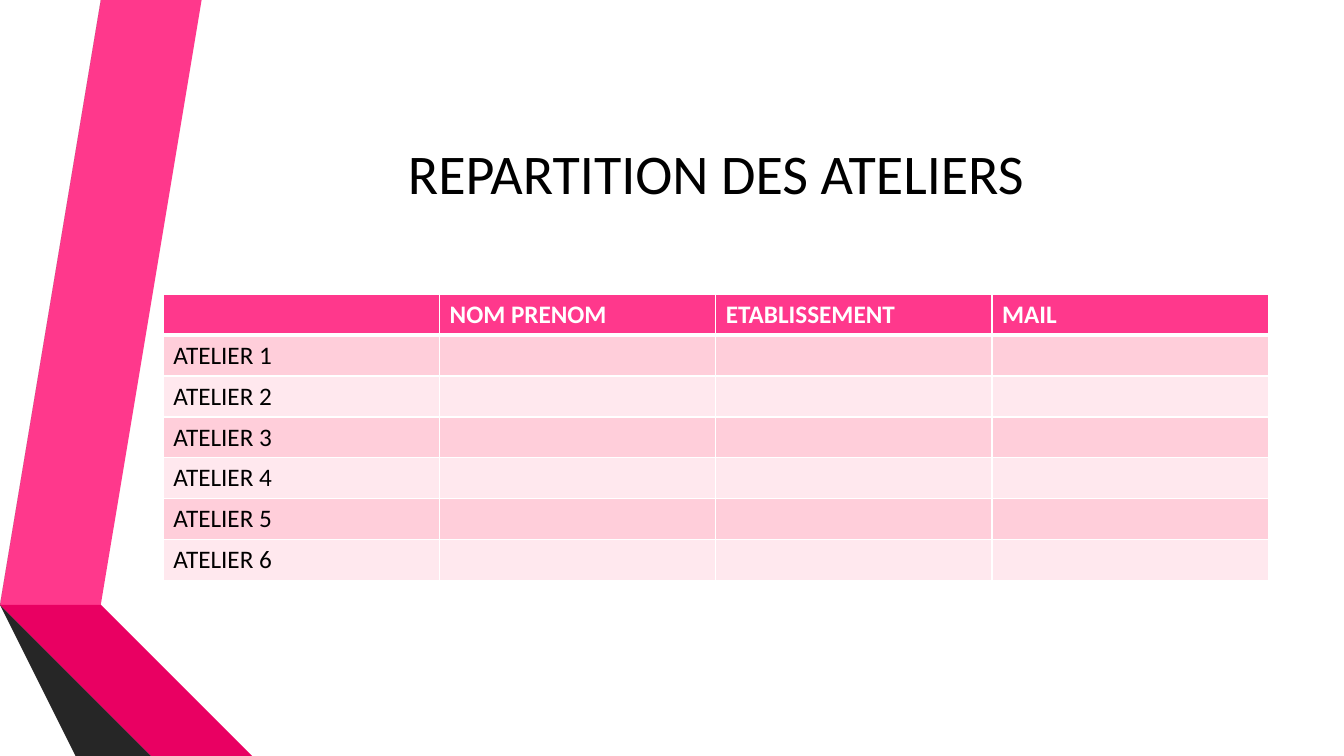
from lxml import etree
from pptx import Presentation
from pptx.dml.color import RGBColor
from pptx.enum import text
from pptx.oxml import ns
from pptx.util import Inches, Pt

PINK = RGBColor(0xFF, 0x38, 0x8C)
DEEP_PINK = RGBColor(0xE9, 0x00, 0x62)
DARK_PINK = RGBColor(0x9C, 0x00, 0x42)
GREY = RGBColor(0x59, 0x59, 0x59)
DEEP_GREY = RGBColor(0x40, 0x40, 0x40)
DARK_GREY = RGBColor(0x26, 0x26, 0x26)
BAND_COLOURS = [RGBColor(0xFF, 0xCE, 0xDA), RGBColor(0xFF, 0xE8, 0xEE)]
BLACK = RGBColor(0, 0, 0)
WHITE = RGBColor(0xFF, 0xFF, 0xFF)

FONT = "Calibri"
TITLE = "REPARTITION DES ATELIERS"
HEADERS = ["", "NOM PRENOM", "ETABLISSEMENT", "MAIL"]
WORKSHOPS = [f"ATELIER {number}" for number in range(1, 7)]

# Ribbon outlines in inches, from back to front
RIBBONS = [
    (PINK, [(0.5, 5.78), (0.77, 5.83), (1.73, 0), (1.45, 0)]),
    (GREY, [(1.39, 0), (1.11, 0), (0.16, 5.73), (0.44, 5.77)]),
    (DARK_GREY, [(0.16, 5.73), (1.45, 7.5), (1.51, 7.5)]),
    (DARK_PINK, [(0.5, 5.79), (2.08, 7.5), (2.14, 7.5)]),
    (DEEP_PINK, [(0.5, 5.79), (2.14, 7.5), (2.83, 7.5), (0.77, 5.83), (0.5, 5.78)]),
    (DEEP_GREY, [(2.02, 7.5), (0.48, 5.83), (0.43, 5.78), (0.44, 5.77),
                 (0.16, 5.73), (1.51, 7.5)]),
]

LEFT, WIDTH = Inches(1.62), Inches(10.96)
TITLE_TOP, TITLE_HEIGHT = Inches(0.75), Inches(1.92)
TABLE_TOP, TABLE_HEIGHT = Inches(2.92), Inches(2.84)


def write(frame, content, size=18, colour=BLACK, bold=False, align=text.PP_ALIGN.LEFT):
    paragraph = frame.paragraphs[0]
    paragraph.alignment = align
    paragraph.font.size = Pt(size)
    if not content:
        return
    run = paragraph.add_run()
    run.text = content
    run.font.name = FONT
    run.font.size = Pt(size)
    run.font.bold = bold
    run.font.color.rgb = colour


def add_ribbon(slide, colour, points):
    builder = slide.shapes.build_freeform(*points[0], scale=Inches(1))
    builder.add_line_segments(points[1:], close=True)
    shape = builder.convert_to_shape()
    shape.shadow.inherit = False
    shape.fill.solid()
    shape.fill.fore_color.rgb = colour
    shape.line.fill.background()


def set_borders(cell, **widths):
    """Draw white borders; widths in points are keyed by side: L, R, T, B."""
    properties = cell._tc.get_or_add_tcPr()
    for position, (side, width) in enumerate(widths.items()):
        line = etree.Element(ns.qn(f"a:ln{side}"), w=str(Pt(width)))
        fill = etree.SubElement(line, ns.qn("a:solidFill"))
        etree.SubElement(fill, ns.qn("a:srgbClr"), val=str(WHITE))
        properties.insert(position, line)


def add_workshop_table(slide):
    rows = [HEADERS] + [[name, "", "", ""] for name in WORKSHOPS]
    table = slide.shapes.add_table(
        len(rows), len(HEADERS), LEFT, TABLE_TOP, WIDTH, TABLE_HEIGHT).table
    for row_index, row in enumerate(rows):
        header = row_index == 0
        for column_index, content in enumerate(row):
            cell = table.cell(row_index, column_index)
            cell.fill.solid()
            cell.fill.fore_color.rgb = PINK if header else BAND_COLOURS[(row_index - 1) % 2]
            write(cell.text_frame, content, colour=WHITE if header else BLACK, bold=header)
            set_borders(cell, L=1, R=1, T=3 if row_index == 1 else 1, B=3 if header else 1)


def main():
    presentation = Presentation()
    presentation.slide_width, presentation.slide_height = Inches(13.33), Inches(7.5)
    slide = presentation.slides.add_slide(presentation.slide_layouts[6])
    for colour, points in RIBBONS:
        add_ribbon(slide, colour, points)
    frame = slide.shapes.add_textbox(LEFT, TITLE_TOP, WIDTH, TITLE_HEIGHT).text_frame
    frame.word_wrap = True
    frame.vertical_anchor = text.MSO_ANCHOR.MIDDLE
    write(frame, TITLE, size=40, align=text.PP_ALIGN.CENTER)
    add_workshop_table(slide)
    presentation.save("out.pptx")


if __name__ == "__main__":
    main()
